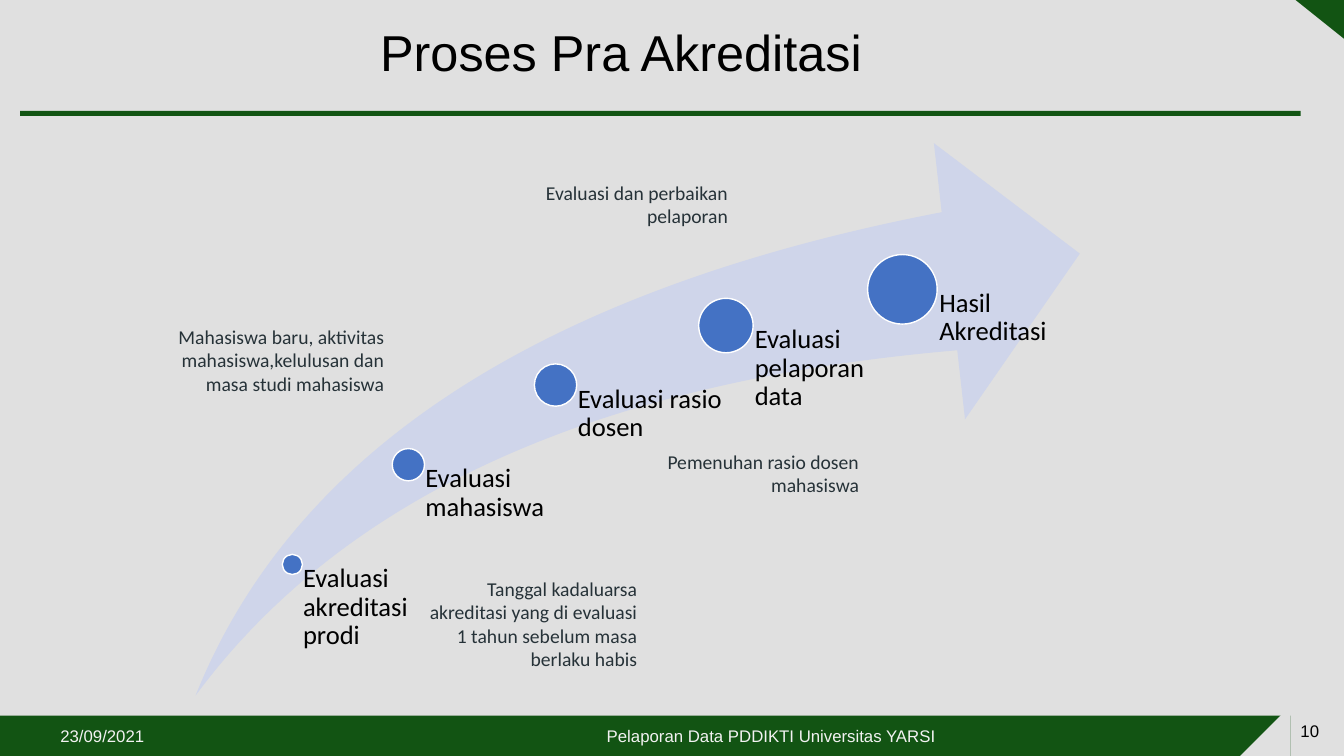
"""Build the pre-accreditation process slide."""
from pptx import Presentation
from pptx import util as u
from pptx.dml.color import RGBColor
from pptx.enum import shapes, text

GREEN = RGBColor(0x12, 0x54, 0x13)
GREY = RGBColor(0xE0, 0xE0, 0xE0)
PALE = RGBColor(0xF2, 0xF2, 0xF2)
BLACK = RGBColor(0, 0, 0)
WHITE = RGBColor(0xFF, 0xFF, 0xFF)
SLATE = RGBColor(0x26, 0x32, 0x38)
BLUE = RGBColor(0x44, 0x72, 0xC4)
LAVENDER = RGBColor(0xCF, 0xD5, 0xEA)

PX = 9144
KIND = shapes.MSO_SHAPE
ALIGN = text.PP_ALIGN
MIDDLE = text.MSO_ANCHOR.MIDDLE

TITLE = "Proses Pra Akreditasi"
FRAME = [
    (KIND.RECTANGLE, (0, 710, 1335, 40), 0, GREEN),
    (KIND.RECTANGLE, (1280, 700, 55, 50), 0, GREY),
    (KIND.RIGHT_TRIANGLE, (1230, 700, 50, 50), 270, GREY),
    (KIND.RIGHT_TRIANGLE, (1285, 0, 50, 40), 180, GREEN),
    (KIND.RECTANGLE, (20, 110, 1270, 5), 0, GREEN),
]
FOOTER = [
    ("23/09/2021", (50, 720, 250, 20), ALIGN.LEFT, PALE),
    ("Pelaporan Data PDDIKTI Universitas YARSI", (350, 720, 830, 20), ALIGN.CENTER, PALE),
    ("10", (1280, 700, 53, 50), ALIGN.LEFT, BLACK),
]
SWOOSH = (194, 142, 877, 548)
STEPS = [
    ("Evaluasi akreditasi prodi", (290, 560), 20, 130),
    ("Evaluasi mahasiswa", (405, 461), 32, 146),
    ("Evaluasi rasio dosen", (551, 382), 42, 169),
    ("Evaluasi pelaporan data", (720, 323), 54, 175),
    ("Hasil Akreditasi", (895, 287), 69, 175),
]
NOTE_WIDTH = 212
NOTES = [
    ("Tanggal kadaluarsa akreditasi yang di evaluasi 1 tahun sebelum masa berlaku habis", 420, 572, 94),
    ("Mahasiswa baru, aktivitas mahasiswa,kelulusan dan masa studi mahasiswa", 169, 322, 71),
    ("Pemenuhan rasio dosen mahasiswa", 640, 446, 47),
    ("Evaluasi dan perbaikan pelaporan", 510, 179, 47),
]


def emu(box):
    return [round(length * PX) for length in box]


def add_filled(slide, kind, box, fill, turn=0):
    shape = slide.shapes.add_shape(kind, *emu(box))
    shape.shadow.inherit = False
    shape.rotation = turn
    shape.fill.solid()
    shape.fill.fore_color.rgb = fill
    shape.line.fill.background()
    return shape


def write(frame, words, font, size, color, align=ALIGN.LEFT, spacing=None):
    frame.word_wrap = True
    paragraph = frame.paragraphs[0]
    paragraph.alignment = align
    paragraph.line_spacing = spacing
    run = paragraph.add_run()
    run.text = words
    run.font.name = font
    run.font.size = u.Pt(size)
    run.font.color.rgb = color


def add_words(slide, box, left_inset=None):
    frame = slide.shapes.add_textbox(*emu(box)).text_frame
    if left_inset is not None:
        frame.margin_left = round(left_inset * PX)
        frame.margin_top = frame.margin_right = frame.margin_bottom = 0
    return frame


def main():
    deck = Presentation()
    deck.slide_width, deck.slide_height = emu((1333, 750))
    slide = deck.slides.add_slide(deck.slide_layouts[5])
    slide.background.fill.solid()
    slide.background.fill.fore_color.rgb = GREY

    for kind, box, turn, fill in FRAME:
        add_filled(slide, kind, box, fill, turn)

    title = slide.shapes.title
    title.left, title.top, title.width, title.height = emu((360, 10, 512, 90))
    title.text_frame.vertical_anchor = MIDDLE
    write(title.text_frame, TITLE, "Arial", 36, BLACK, ALIGN.CENTER, 0.9)

    for words, box, align, color in FOOTER:
        footer = add_words(slide, box)
        footer.vertical_anchor = MIDDLE
        write(footer, words, "Arial", 12, color, align)

    swoosh = add_filled(slide, KIND.SWOOSH_ARROW, SWOOSH, LAVENDER)
    swoosh.adjustments[0] = swoosh.adjustments[1] = 0.25
    floor = SWOOSH[1] + SWOOSH[3]

    for words, (x, y), size, width in STEPS:
        radius = size / 2
        dot = add_filled(slide, KIND.OVAL, (x - radius, y - radius, size, size), BLUE)
        dot.line.color.rgb = WHITE
        dot.line.width = u.Pt(1)
        label = add_words(slide, (x, y, width, floor - y), radius * 1.06)
        write(label, words, "Calibri", 19, BLACK, spacing=0.9)

    for words, left, top, height in NOTES:
        note = add_words(slide, (left, top, NOTE_WIDTH, height), 0)
        note.auto_size = text.MSO_AUTO_SIZE.SHAPE_TO_FIT_TEXT
        write(note, words, "Calibri", 14, SLATE, ALIGN.RIGHT)

    deck.save("out.pptx")


if __name__ == "__main__":
    main()
